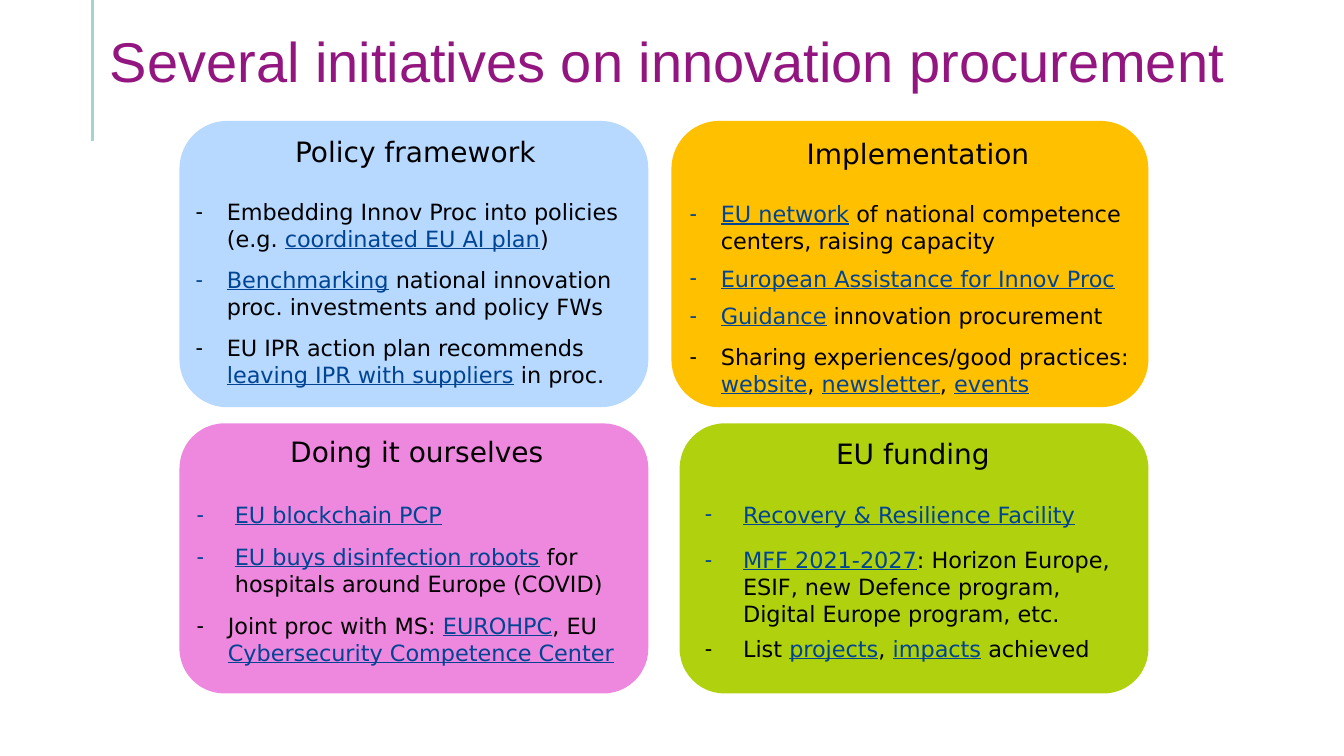
from lxml.etree import SubElement
from pptx import Presentation
from pptx.dml.color import RGBColor
from pptx.enum.shapes import MSO_CONNECTOR, MSO_SHAPE
from pptx.enum.text import MSO_ANCHOR, MSO_AUTO_SIZE, PP_ALIGN
from pptx.oxml.ns import qn
from pptx.util import Emu, Pt

PX = 9144  # 100 px to the inch
BLACK = RGBColor(0x00, 0x00, 0x00)
LINK_BLUE = RGBColor(0x00, 0x44, 0x94)
PURPLE = RGBColor(0x93, 0x16, 0x80)
TEAL = RGBColor(0xA2, 0xD5, 0xD0)
SKY = RGBColor(0xB7, 0xD8, 0xFF)
AMBER = RGBColor(0xFF, 0xC0, 0x00)
PINK = RGBColor(0xED, 0x88, 0xDE)
LIME = RGBColor(0xB0, 0xD1, 0x0E)
TITLE_FONT = "Arial"
BODY_FONT = "DejaVu Sans"

# Panel box, fill, text offset and size, heading, gap below heading in points,
# items as (text, indent in px, gap above in points); |bars| enclose links.
INITIATIVES = [
    ((178, 120, 465, 284), SKY, (6, 8, 456, 263), "Policy framework", 22, [
        ("Embedding Innov Proc into policies (e.g. |coordinated EU AI plan|)", 31, 0),
        ("|Benchmarking| national innovation proc. investments and policy FWs", 31, 10),
        ("EU IPR action plan recommends |leaving IPR with suppliers| in proc.", 31, 10),
    ]),
    ((666, 120, 473, 284), AMBER, (8, 10, 473, 296), "Implementation", 22, [
        ("|EU network| of national competence centers, raising capacity", 31, 0),
        ("|European Assistance for Innov Proc|", 31, 7.5),
        ("|Guidance| innovation procurement", 31, 7.5),
        ("Sharing experiences/good practices: |website|, |newsletter|, |events|", 31, 10),
    ]),
    ((178, 420, 465, 268), PINK, (7, 6, 457, 242), "Doing it ourselves", 23.5, [
        ("|EU blockchain PCP|", 38, 0),
        ("|EU buys disinfection robots| for hospitals around Europe (COVID)", 38, 11),
        ("Joint proc with MS: |EUROHPC|, EU |Cybersecurity Competence Center|", 31, 11),
    ]),
    ((674, 420, 465, 268), LIME, (15, 8, 433, 236), "EU funding", 22, [
        ("|Recovery & Resilience Facility|", 38, 0),
        ("|MFF 2021-2027|: Horizon Europe, ESIF, new Defence program, "
         "Digital Europe program, etc.", 38, 13),
        ("List |projects|, |impacts| achieved", 38, 6),
    ]),
]


def px(*lengths):
    return [Emu(length * PX) for length in lengths]


def place(placeholder, box, anchor):
    placeholder.left, placeholder.top, placeholder.width, placeholder.height = px(*box)
    frame = placeholder.text_frame
    frame.word_wrap = True
    frame.auto_size = MSO_AUTO_SIZE.NONE
    frame.vertical_anchor = anchor
    return frame


def add_run(paragraph, words, size, color=BLACK, face=BODY_FONT):
    run = paragraph.add_run()
    run.text = words
    run.font.name = face
    run.font.size = Pt(size)
    run.font.bold = False
    run.font.color.rgb = color
    return run


def set_layout(paragraph, align, before, after, indent=0):
    """Set alignment, spacing in points, and a dash with hanging indent if any."""
    paragraph.alignment = align
    paragraph.line_spacing = 1.0
    paragraph.space_before = Pt(before)
    paragraph.space_after = Pt(after)
    properties = paragraph._p.get_or_add_pPr()
    properties.set("marL", str(indent * PX))
    properties.set("indent", str(-indent * PX))
    if indent:
        SubElement(properties, qn("a:buChar")).set("char", "-")
    else:
        SubElement(properties, qn("a:buNone"))


def add_title(slide, box):
    frame = place(slide.shapes.title, box, MSO_ANCHOR.BOTTOM)
    frame.margin_bottom = 0
    paragraph = frame.paragraphs[0]
    paragraph.alignment = PP_ALIGN.LEFT
    paragraph.line_spacing = 0.9
    add_run(paragraph, "Several initiatives on innovation procurement", 40, PURPLE, TITLE_FONT)


def add_title_rule(slide, x, bottom):
    rule = slide.shapes.add_connector(MSO_CONNECTOR.STRAIGHT, *px(x, 0, x, bottom))
    rule.line.color.rgb = TEAL
    rule.line.width = Pt(2.25)
    SubElement(rule._element.spPr, qn("a:effectLst"))


def add_initiative(slide, body, box, fill, inner, heading, heading_gap, items):
    panel = slide.shapes.add_shape(MSO_SHAPE.ROUNDED_RECTANGLE, *px(*box))
    panel.shadow.inherit = False
    panel.fill.solid()
    panel.fill.fore_color.rgb = fill
    panel.line.fill.background()
    body._element.addprevious(panel._element)  # keep the text in front

    left, top, width, height = inner
    frame = place(body, (box[0] + left, box[1] + top, width, height), MSO_ANCHOR.TOP)
    heading_line = frame.paragraphs[0]
    set_layout(heading_line, PP_ALIGN.CENTER, 0, heading_gap)
    add_run(heading_line, heading, 20)
    for text, indent, gap in items:
        item = frame.add_paragraph()
        set_layout(item, PP_ALIGN.LEFT, gap, 0, indent)
        for position, words in enumerate(text.split("|")):
            is_link = position % 2 == 1
            if words:
                run = add_run(item, words, 16, LINK_BLUE if is_link else BLACK)
                run.font.underline = is_link


def main():
    deck = Presentation()
    deck.slide_width, deck.slide_height = px(1333, 750)
    comparison = deck.slide_layouts[4]  # a title and four bodies
    slide = deck.slides.add_slide(comparison)
    add_title_rule(slide, 92, 140)
    add_title(slide, (99, 8, 1285, 86))
    bodies = [p for p in slide.placeholders if p.placeholder_format.idx > 0]
    for body, initiative in zip(bodies, INITIATIVES):
        add_initiative(slide, body, *initiative)
    deck.save("out.pptx")


if __name__ == "__main__":
    main()
